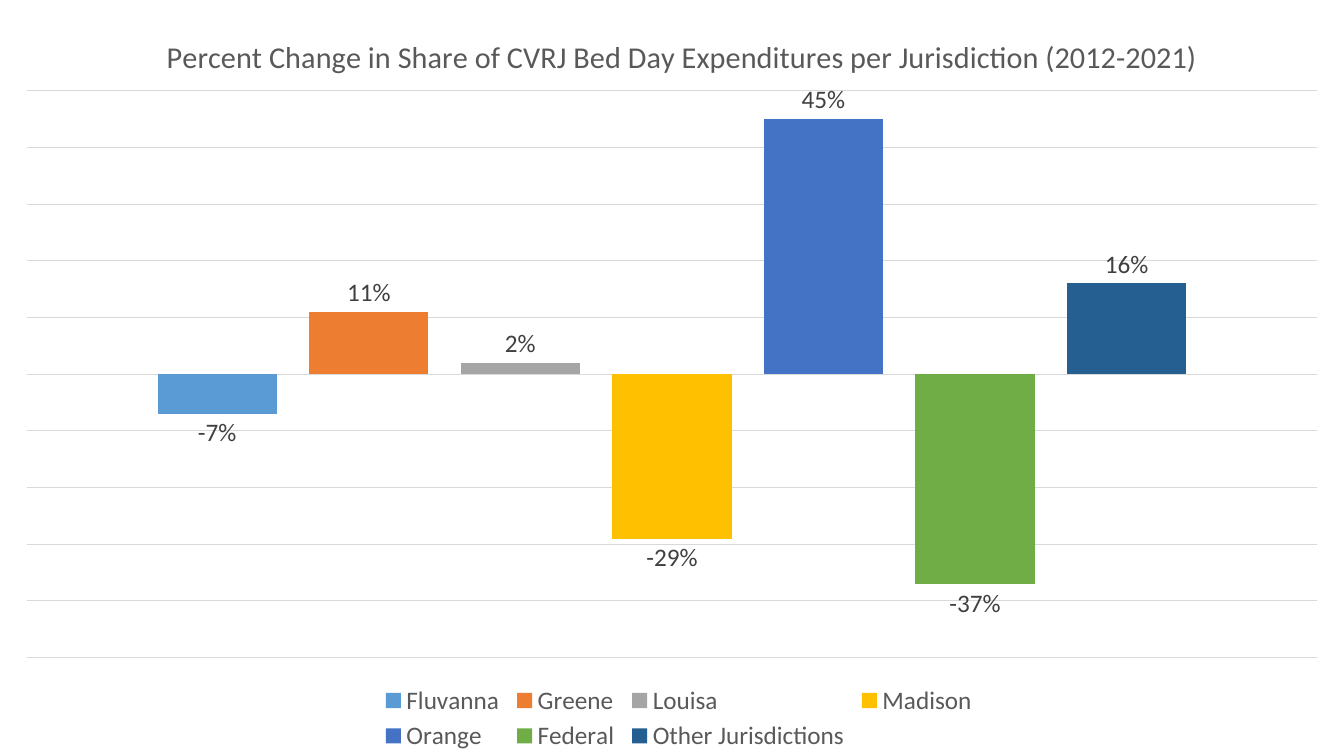
from lxml import etree
from pptx import Presentation
from pptx.chart.data import CategoryChartData
from pptx.dml.color import RGBColor
from pptx.enum.chart import (XL_CHART_TYPE as ChartType, XL_LABEL_POSITION as LabelPosition,
                             XL_LEGEND_POSITION as LegendPosition)
from pptx.oxml.ns import qn
from pptx.util import Cm, Pt

FONT = "Calibri"
GREY = "595959"
TITLE = "Percent Change in Share of CVRJ Bed Day Expenditures per Jurisdiction (2012-2021)"
JURISDICTIONS = [
    ("Fluvanna", -0.07, "5B9BD5"),
    ("Greene", 0.11, "ED7D31"),
    ("Louisa", 0.02, "A5A5A5"),
    ("Madison", -0.29, "FFC000"),
    ("Orange", 0.45, "4472C4"),
    ("Federal", -0.37, "70AD47"),
    ("Other Jurisdictions", 0.16, "255E91"),
]


def color(hex_string):
    return RGBColor.from_string(hex_string)


def format_font(font, size=18, hex_color=GREY, bold=False):
    font.name = FONT
    font.size = Pt(size)
    font.bold = bold
    font.color.rgb = color(hex_color)


def write_text(text_frame, text, **font_format):
    run = text_frame.paragraphs[0].add_run()
    run.text = text
    format_font(run.font, **font_format)


def place(parent, after=None, **settings):
    """Give a chart part a manual layout, in fractions of the chart."""
    for old_layout in parent.findall(qn("c:layout")):
        parent.remove(old_layout)
    layout = etree.Element(qn("c:layout"))
    manual = etree.SubElement(layout, qn("c:manualLayout"))
    for name, value in settings.items():
        etree.SubElement(manual, qn(f"c:{name}")).set("val", str(value))
    if after is None:
        parent.insert(0, layout)
    else:
        parent.find(qn(after)).addnext(layout)


def add_column_chart(slide, width, height):
    data = CategoryChartData(number_format="0%")
    data.categories = ["1"]
    for name, value, _ in JURISDICTIONS:
        data.add_series(name, [value])
    frame = slide.shapes.add_chart(ChartType.COLUMN_CLUSTERED, Cm(0), Cm(0), width, height, data)
    chart = frame.chart
    format_font(chart.font, hex_color="000000")
    return chart


def format_axes(chart):
    chart.category_axis.visible = False
    axis = chart.value_axis
    axis.visible = False
    axis.minimum_scale, axis.maximum_scale, axis.major_unit = -0.5, 0.5, 0.1
    axis.tick_labels.number_format = "0%"
    axis.tick_labels.number_format_is_linked = False
    grid_line = axis.major_gridlines.format.line
    grid_line.color.rgb = color("D9D9D9")
    grid_line.width = Pt(0.75)


def format_columns(plot):
    plot.gap_width = 219
    plot.overlap = -27
    plot.vary_by_categories = False
    for series, (_, _, fill) in zip(plot.series, JURISDICTIONS):
        series.invert_if_negative = False
        series.format.fill.solid()
        series.format.fill.fore_color.rgb = color(fill)
        labels = series.data_labels
        labels.show_value = True
        labels.number_format = "0%"
        labels.number_format_is_linked = False
        labels.position = LabelPosition.OUTSIDE_END
        format_font(labels.font, hex_color="404040")


def add_title_and_legend(chart):
    chart.has_title = True
    write_text(chart.chart_title.text_frame, TITLE, size=21.6)
    chart.chart_title.include_in_layout = False
    chart.has_legend = True
    chart.legend.position = LegendPosition.BOTTOM
    chart.legend.include_in_layout = False
    format_font(chart.legend.font)


def arrange(chart):
    parts = chart.element if hasattr(chart, "element") else chart._chartSpace
    body = parts.find(qn("c:chart"))
    place(body.find(qn("c:title")), after="c:tx",
          xMode="edge", yMode="edge", x=0.12, y=0.04)
    place(body.find(qn("c:plotArea")), layoutTarget="inner",
          xMode="edge", yMode="edge", x=0.02, y=0.12, w=0.96, h=0.75)
    place(body.find(qn("c:legend")), after="c:legendPos",
          xMode="edge", yMode="edge", x=0.28, y=0.9, w=0.45, h=0.1)


def main():
    presentation = Presentation()
    presentation.slide_width, presentation.slide_height = Cm(33.87), Cm(19.05)
    slide = presentation.slides.add_slide(presentation.slide_layouts[6])

    # Chart over the whole slide
    chart = add_column_chart(slide, presentation.slide_width, presentation.slide_height)
    format_axes(chart)
    format_columns(chart.plots[0])

    # Title, legend and their places
    add_title_and_legend(chart)
    arrange(chart)

    presentation.save("out.pptx")


if __name__ == "__main__":
    main()
